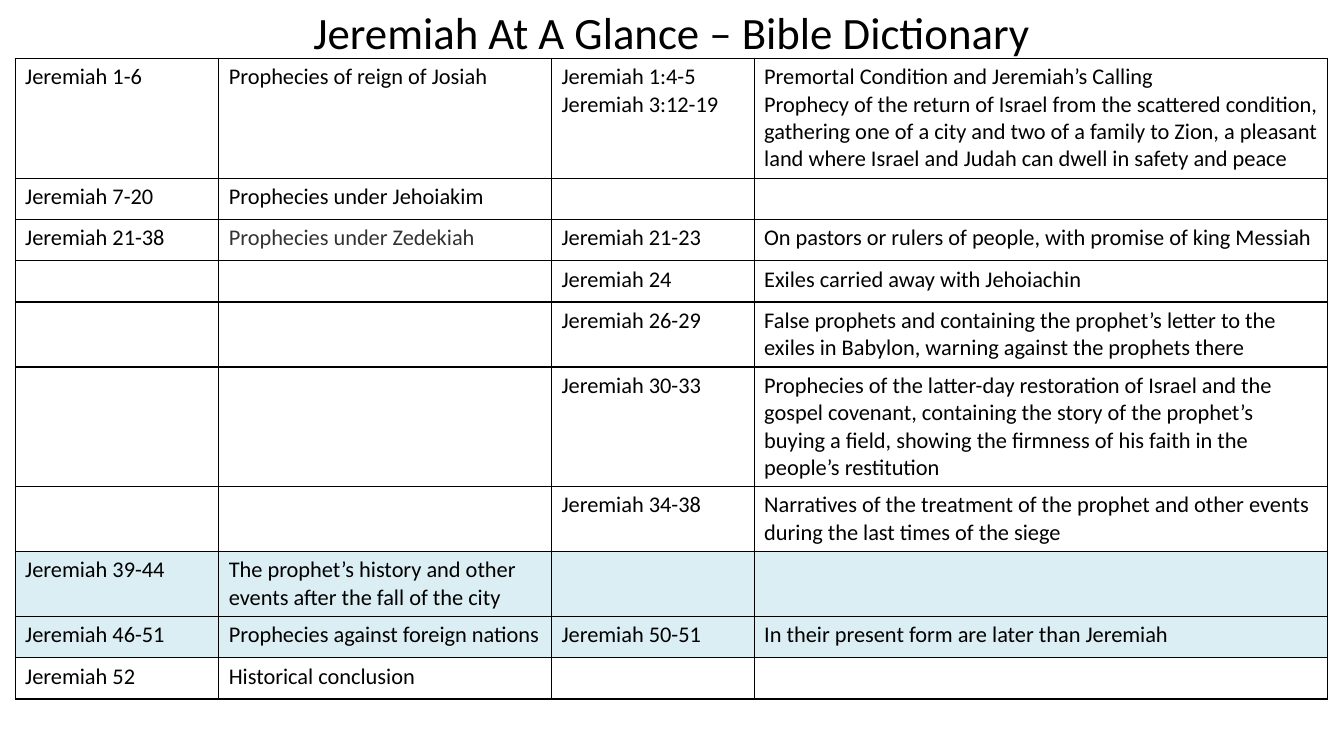
import pptx
import pptx.util
import pptx.dml.color
import pptx.enum.text
import pptx.oxml
import pptx.oxml.ns

deck = pptx.Presentation()
deck.slide_width = pptx.util.Inches(13.33)
deck.slide_height = pptx.util.Inches(7.5)
page = deck.slides.add_slide(deck.slide_layouts[6])
unit = deck.slide_width / 1333


def color(code):
    return pptx.dml.color.RGBColor.from_string(code)


def write(para, words, size, code):
    span = para.add_run()
    span.text = words
    span.font.name = "Calibri"
    span.font.size = pptx.util.Pt(size)
    span.font.color.rgb = color(code)


WHITE, BLUE, BLACK, GRAY = "FFFFFF", "DBEEF4", "000000", "333333"
column_units = [202, 330, 201, 569]
first_row, other_row = 77, 41

chapters = [
    (["Jeremiah 1-6"], ["Prophecies of reign of Josiah"],
     ["Jeremiah 1:4-5", "Jeremiah 3:12-19"],
     ["Premortal Condition and Jeremiah’s Calling",
      "Prophecy of the return of Israel from the scattered condition, gathering one of a city "
      "and two of a family to Zion, a pleasant land where Israel and Judah can dwell in safety and peace"]),
    (["Jeremiah 7-20"], ["Prophecies under Jehoiakim"], [], []),
    (["Jeremiah 21-38"], ["Prophecies under Zedekiah"], ["Jeremiah 21-23"],
     ["On pastors or rulers of people, with promise of king Messiah"]),
    ([], [], ["Jeremiah 24"], ["Exiles carried away with Jehoiachin"]),
    ([], [], ["Jeremiah 26-29"],
     ["False prophets and containing the prophet’s letter to the exiles in Babylon, "
      "warning against the prophets there"]),
    ([], [], ["Jeremiah 30-33"],
     ["Prophecies of the latter-day restoration of Israel and the gospel covenant, containing "
      "the story of the prophet’s buying a field, showing the firmness of his faith in the "
      "people’s restitution"]),
    ([], [], ["Jeremiah 34-38"],
     ["Narratives of the treatment of the prophet and other events during the last times of the siege"]),
    (["Jeremiah 39-44"], ["The prophet’s history and other events after the fall of the city"], [], []),
    (["Jeremiah 46-51"], ["Prophecies against foreign nations"], ["Jeremiah 50-51"],
     ["In their present form are later than Jeremiah"]),
    (["Jeremiah 52"], ["Historical conclusion"], [], []),
]
blue_rows = {7, 8}
unfilled = {(1, 2), (1, 3)} | {(9, column) for column in range(4)}
gray_cell = (2, 1)

frame = page.shapes.add_table(len(chapters), len(column_units), int(15 * unit), int(58 * unit),
                              int(sum(column_units) * unit), int(653 * unit))
table = frame.table
table.first_row = False
table.horz_banding = False
for column, width in zip(table.columns, column_units):
    column.width = int(width * unit)

for row, chapter in enumerate(chapters):
    table.rows[row].height = int((other_row if row else first_row) * unit)
    for column, lines in enumerate(chapter):
        cell = table.cell(row, column)
        properties = cell._tc.get_or_add_tcPr()
        for side in ("lnL", "lnR", "lnT", "lnB"):
            properties.append(pptx.oxml.parse_xml(
                f'<a:{side} {pptx.oxml.ns.nsdecls("a")} w="12700"><a:solidFill>'
                f'<a:srgbClr val="{BLACK}"/></a:solidFill></a:{side}>'))
        if (row, column) in unfilled:
            cell.fill.background()
        else:
            cell.fill.solid()
            cell.fill.fore_color.rgb = color(BLUE if row in blue_rows else WHITE)
        for number, words in enumerate(lines):
            para = cell.text_frame.add_paragraph() if number else cell.text_frame.paragraphs[0]
            write(para, words, 16, GRAY if (row, column) == gray_cell else BLACK)
frame.height = int(653 * unit)

title = page.shapes.add_textbox(int(301 * unit), 0, int(841 * unit), int(64 * unit))
title.text_frame.word_wrap = True
title.text_frame.auto_size = pptx.enum.text.MSO_AUTO_SIZE.SHAPE_TO_FIT_TEXT
write(title.text_frame.paragraphs[0], "Jeremiah At A Glance – Bible Dictionary", 32, BLACK)

deck.save("out.pptx")
